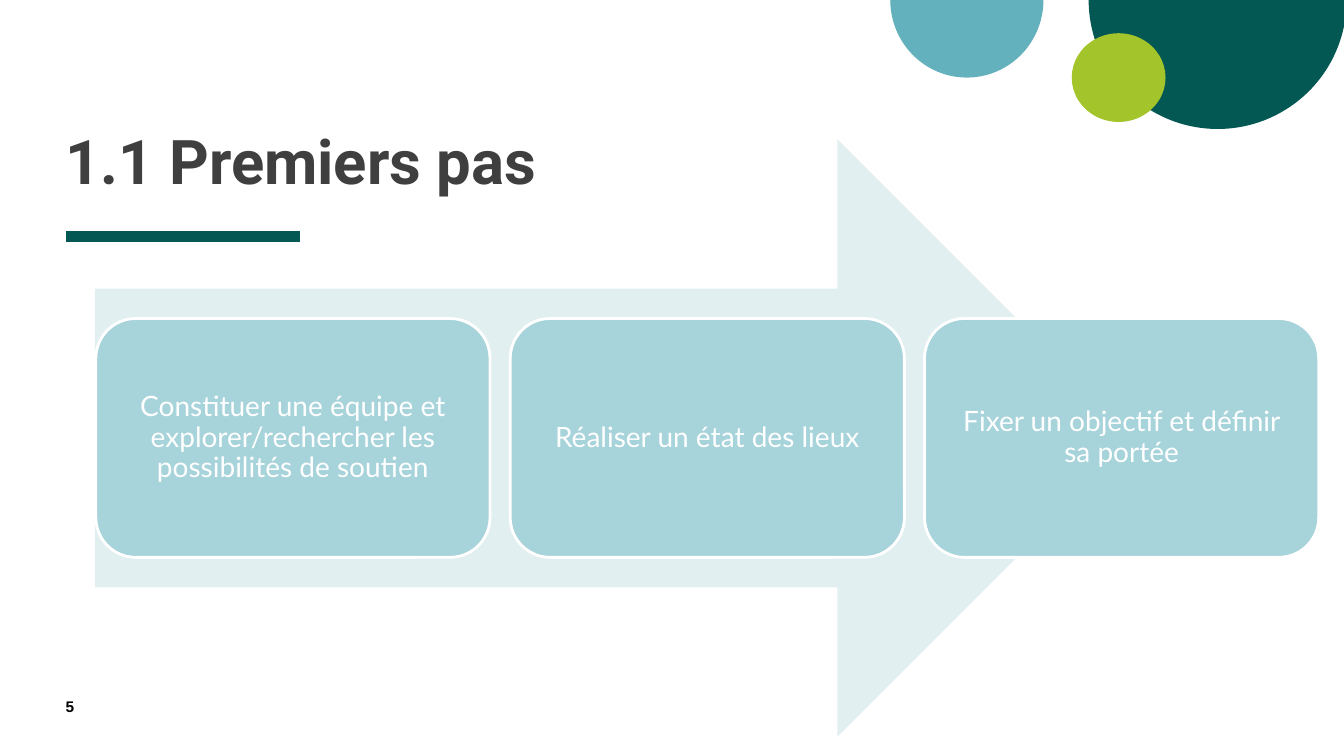
from pptx import Presentation
from pptx.dml.color import RGBColor
from pptx.enum.shapes import MSO_CONNECTOR, MSO_SHAPE
from pptx.enum.text import MSO_ANCHOR, PP_ALIGN
from pptx.oxml.ns import qn
from pptx.util import Inches, Pt
from lxml import etree

PIE, ELLIPSE = MSO_SHAPE.PIE, MSO_SHAPE.OVAL
ARROW, CARD = MSO_SHAPE.RIGHT_ARROW, MSO_SHAPE.ROUNDED_RECTANGLE
STRAIGHT = MSO_CONNECTOR.STRAIGHT
TOP, MIDDLE, BOTTOM = MSO_ANCHOR.TOP, MSO_ANCHOR.MIDDLE, MSO_ANCHOR.BOTTOM
LEFT, CENTER = PP_ALIGN.LEFT, PP_ALIGN.CENTER

THEME = {
    "green": RGBColor.from_string("035854"),
    "teal": RGBColor.from_string("64B1BE"),
    "lime": RGBColor.from_string("A3C42A"),
    "arrow": RGBColor.from_string("E1EFF1"),
    "card": RGBColor.from_string("A7D3DA"),
    "white": RGBColor.from_string("FFFFFF"),
    # font, size, bold, colour, line spacing
    "title": ("Roboto", 44, True, RGBColor.from_string("3F3F3F"), 0.8),
    "step": ("Lato", 20, False, RGBColor.from_string("FFFFFF"), 0.9),
    "number": ("Arial", 11, True, RGBColor.from_string("000000"), 1.0),
}

deck = Presentation()
deck.slide_width, deck.slide_height = Inches(13.33), Inches(7.5)
page = deck.slides.add_slide(deck.slide_layouts[6])
COLUMN, ROW = deck.slide_width / 100, deck.slide_height / 100
MARGIN = 4.88


def add_figure(kind, left, top, width, height, color):
    """Add a plain filled shape, measured in percent of the slide."""
    figure = page.shapes.add_shape(kind, int(left * COLUMN), int(top * ROW),
                                   int(width * COLUMN), int(height * ROW))
    figure.shadow.inherit = False
    figure.fill.solid()
    figure.fill.fore_color.rgb = THEME[color]
    figure.line.fill.background()
    return figure


def write(box, text, style, anchor, align, inset=0):
    """Fill a box with one styled paragraph."""
    frame = box.text_frame
    frame.word_wrap = True
    frame.vertical_anchor = anchor
    frame.margin_left = frame.margin_right = inset
    frame.margin_top = frame.margin_bottom = inset
    para = frame.paragraphs[0]
    para.text, para.alignment = text, align
    font = para.font
    font.name, size, font.bold, font.color.rgb, para.line_spacing = THEME[style]
    font.size = Pt(size)


# Corner discs, the two half discs hanging from the top edge
for kind, left, top, width, height, color in (
    (PIE, 81, -17.07, 19.2, 34.13, "green"),
    (PIE, 66.24, -10.27, 11.4, 20.53, "teal"),
    (ELLIPSE, 79.74, 4.4, 6.98, 11.73, "lime"),
):
    disc = add_figure(kind, left, top, width, height, color)
    if kind == PIE:
        disc.adjustments[0], disc.adjustments[1] = 0, 108

# Rule under the title
rule_y = int(31.33 * ROW)
rule = page.shapes.add_connector(STRAIGHT, int(MARGIN * COLUMN), rule_y,
                                 int(22.36 * COLUMN), rule_y)
rule.line.color.rgb = THEME["green"]
rule.line.width = Pt(8)
etree.SubElement(rule._element.spPr, qn("a:effectLst"))

# Title and page number
for text, style, top, width, height, anchor in (
    ("1.1 Premiers pas", "title", 2.8, 62.94, 23.2, BOTTOM),
    ("5", "number", 92.27, 4.28, 3.6, TOP),
):
    box = page.shapes.add_textbox(int(MARGIN * COLUMN), int(top * ROW),
                                  int(width * COLUMN), int(height * ROW))
    write(box, text, style, anchor, LEFT)

# Arrow behind the steps
add_figure(ARROW, 7.05, 18.4, 77.49, 79.07, "arrow")

# Step cards at an equal pitch
STEPS = (
    "Constituer une équipe et explorer/rechercher les possibilités de soutien",
    "Réaliser un état des lieux",
    "Fixer un objectif et définir sa portée",
)
for index, step in enumerate(STEPS):
    card = add_figure(CARD, 7.13 + index * 30.83, 42.13, 29.33, 31.6, "card")
    card.adjustments[0] = 0.167
    card.line.color.rgb = THEME["white"]
    card.line.width = Pt(2)
    write(card, step, "step", MIDDLE, CENTER, int(1.2 * COLUMN))

deck.save("out.pptx")
